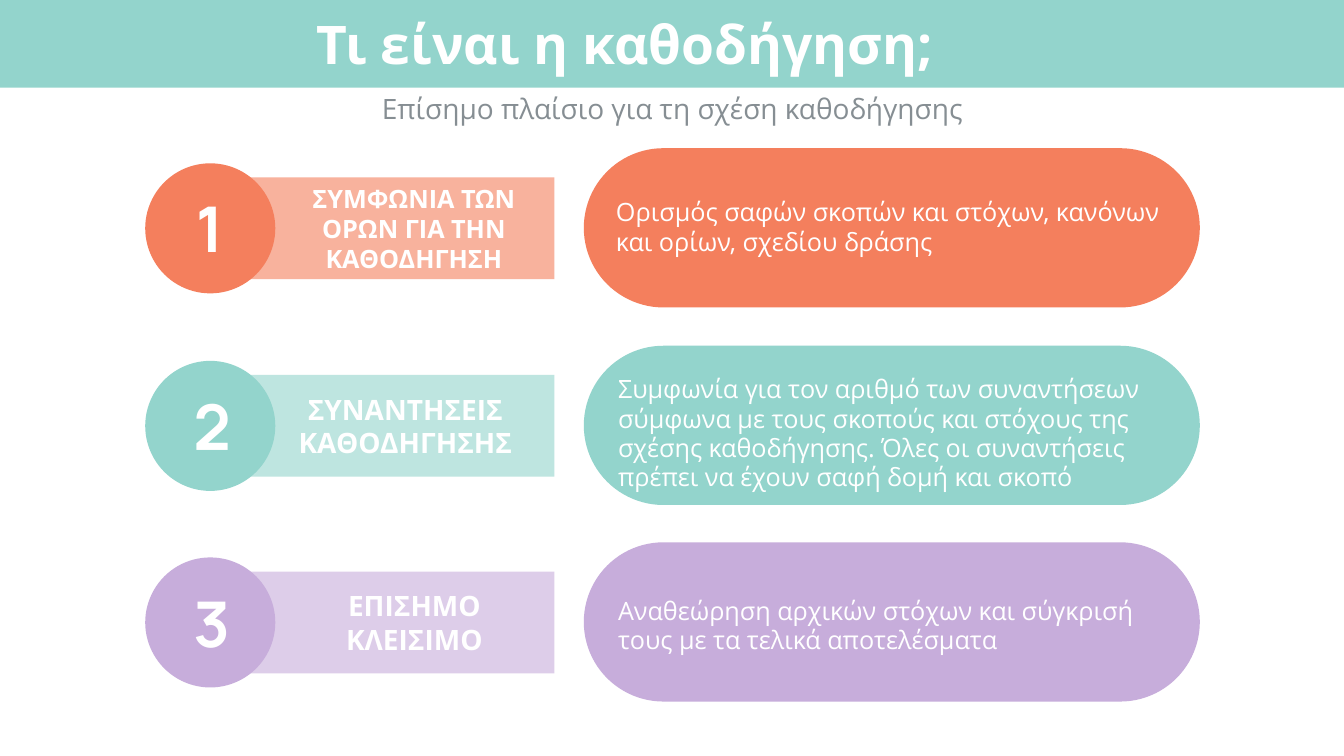
from dataclasses import dataclass

from lxml.etree import SubElement
from pptx import Presentation
from pptx.dml.color import RGBColor
from pptx.enum.shapes import MSO_SHAPE
from pptx.enum.text import MSO_ANCHOR, MSO_AUTO_SIZE, PP_ALIGN
from pptx.oxml.ns import qn
from pptx.util import Emu, Pt

PX = 9144  # EMU per px, 100 px to the inch
SLIDE_W, SLIDE_H = 1333, 750
FIRST_CENTRE, ROW_PITCH = 226, 195.5

ORANGE = RGBColor(0xF4, 0x7F, 0x5D)
TEAL = RGBColor(0x93, 0xD4, 0xCC)
PURPLE = RGBColor(0xC7, 0xAD, 0xDB)
GREY = RGBColor(0x86, 0x8E, 0x93)
WHITE = RGBColor(0xFF, 0xFF, 0xFF)


@dataclass(frozen=True)
class Box:
    x: int
    y: int
    w: int
    h: int

    def emu(self) -> tuple[Emu, ...]:
        return tuple(Emu(v * PX) for v in (self.x, self.y, self.w, self.h))


@dataclass(frozen=True)
class TextStyle:
    size: int
    color: RGBColor = WHITE
    bold: bool = False
    font: str = "Open Sans"
    align: PP_ALIGN = PP_ALIGN.CENTER
    anchor: MSO_ANCHOR = MSO_ANCHOR.MIDDLE
    inset_x: int = 10
    inset_y: int = 5
    spacing: float | None = None


@dataclass(frozen=True)
class Row:
    color: RGBColor
    label: str
    label_size: int
    label_x: int
    label_w: int
    label_h: int
    detail: str
    detail_x: int
    detail_w: int
    detail_h: int
    detail_drop: int  # px below the row's centre


TITLE = TextStyle(38, bold=True, anchor=MSO_ANCHOR.TOP)
SUBTITLE = TextStyle(20, GREY, anchor=MSO_ANCHOR.TOP)
NUMBER = TextStyle(45, bold=True, font="Manrope")
DETAIL = TextStyle(18, align=PP_ALIGN.LEFT, inset_x=5, inset_y=2, spacing=0.97)

ROWS = [
    Row(ORANGE, "ΣΥΜΦΩΝΙΑ ΤΩΝ ΟΡΩΝ ΓΙΑ ΤΗΝ ΚΑΘΟΔΗΓΗΣΗ", 18, 272, 277, 101,
        "Ορισμός σαφών σκοπών και στόχων, κανόνων και ορίων, σχεδίου δράσης",
        606, 556, 64, 0),
    Row(TEAL, "ΣΥΝΑΝΤΗΣΕΙΣ ΚΑΘΟΔΗΓΗΣΗΣ", 20, 272, 260, 77,
        "Συμφωνία για τον αριθμό των συναντήσεων σύμφωνα με τους σκοπούς και "
        "στόχους της σχέσης καθοδήγησης. Όλες οι συναντήσεις πρέπει να έχουν "
        "σαφή δομή και σκοπό",
        608, 556, 123, 8),
    Row(PURPLE, "ΕΠΙΣΗΜΟ ΚΛΕΙΣΙΜΟ", 20, 290, 242, 77,
        "Αναθεώρηση αρχικών στόχων και σύγκρισή τους με τα τελικά αποτελέσματα",
        608, 570, 64, 4),
]


def centred(x: int, centre: int, w: int, h: int) -> Box:
    return Box(x, centre - h // 2, w, h)


def add_block(slide, kind: MSO_SHAPE, box: Box, color: RGBColor, opacity: int = 100):
    sp = slide.shapes.add_shape(kind, *box.emu())
    sp.shadow.inherit = False
    sp.fill.solid()
    sp.fill.fore_color.rgb = color
    sp.line.fill.background()
    if opacity < 100:
        clr = sp.fill._xPr.find(qn("a:solidFill")).find(qn("a:srgbClr"))
        SubElement(clr, qn("a:alpha")).set("val", str(opacity * 1000))
    return sp


def add_text(slide, box: Box, text: str, style: TextStyle) -> None:
    tf = slide.shapes.add_textbox(*box.emu()).text_frame
    tf.word_wrap = True
    tf.auto_size = MSO_AUTO_SIZE.SHAPE_TO_FIT_TEXT
    tf.vertical_anchor = style.anchor
    tf.margin_left = tf.margin_right = Emu(style.inset_x * PX)
    tf.margin_top = tf.margin_bottom = Emu(style.inset_y * PX)
    p = tf.paragraphs[0]
    p.alignment = style.align
    p.line_spacing = style.spacing
    r = p.add_run()
    r.text = text
    r.font.name = style.font
    r.font.size = Pt(style.size)
    r.font.bold = style.bold
    r.font.color.rgb = style.color


def add_row(slide, index: int, row: Row) -> None:
    centre = FIRST_CENTRE + round(index * ROW_PITCH)

    # Numbered label
    add_block(slide, MSO_SHAPE.RECTANGLE, centred(224, centre, 326, 101), row.color, 60)
    add_block(slide, MSO_SHAPE.OVAL, centred(144, centre, 129, 129), row.color)
    add_text(slide, centred(182, centre, 52, 86), str(index + 1), NUMBER)
    add_text(slide, centred(row.label_x, centre, row.label_w, row.label_h),
             row.label, TextStyle(row.label_size, bold=True))

    # Description pill
    pill = add_block(slide, MSO_SHAPE.ROUNDED_RECTANGLE,
                     centred(579, centre, 611, 158), row.color)
    pill.adjustments[0] = 0.5
    add_text(slide, centred(row.detail_x, centre + row.detail_drop,
                            row.detail_w, row.detail_h), row.detail, DETAIL)


def main() -> None:
    prs = Presentation()
    prs.slide_width, prs.slide_height = Emu(SLIDE_W * PX), Emu(SLIDE_H * PX)
    slide = prs.slides.add_slide(prs.slide_layouts[6])

    # Heading
    add_block(slide, MSO_SHAPE.RECTANGLE, Box(0, 0, SLIDE_W, 87), TEAL)
    add_text(slide, Box(218, 6, 804, 74), "Τι είναι η καθοδήγηση;", TITLE)
    add_text(slide, Box(344, 86, 646, 44),
             "Επίσημο πλαίσιο για τη σχέση καθοδήγησης", SUBTITLE)

    # Three elements of the framework
    for index, row in enumerate(ROWS):
        add_row(slide, index, row)

    prs.save("out.pptx")


if __name__ == "__main__":
    main()
